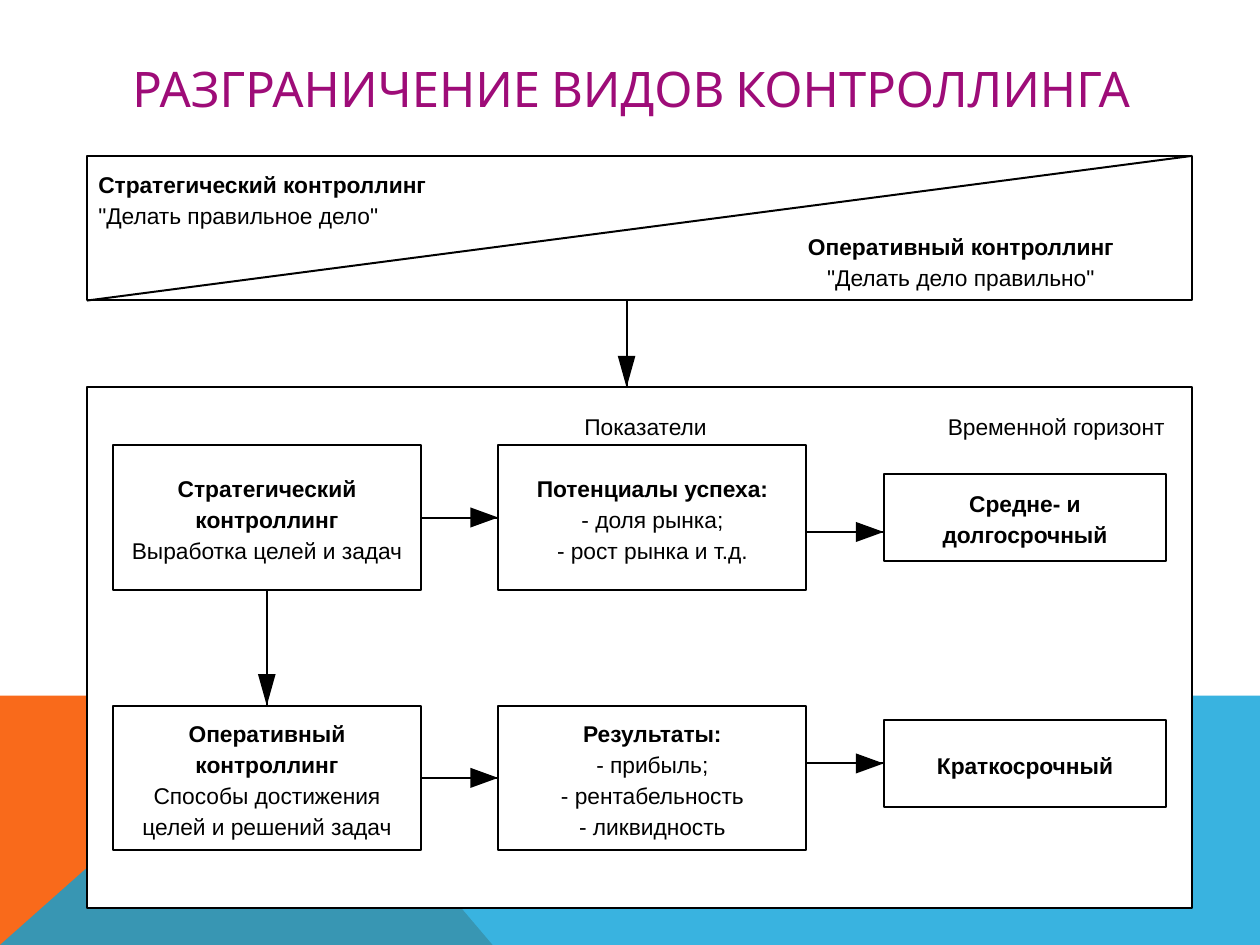
from dataclasses import dataclass

from lxml.etree import SubElement
from pptx import Presentation
from pptx.dml.color import RGBColor
from pptx.enum.shapes import MSO_CONNECTOR as Connector, MSO_SHAPE as Shape
from pptx.enum.text import MSO_ANCHOR as Anchor, MSO_AUTO_SIZE as AutoSize, PP_ALIGN as Align
from pptx.oxml.ns import qn
from pptx.util import Inches, Pt


@dataclass(frozen=True)
class Theme:
    title_color: RGBColor = RGBColor(0x9E, 0x0C, 0x78)
    ink: RGBColor = RGBColor(0, 0, 0)
    paper: RGBColor = RGBColor(255, 255, 255)
    orange: RGBColor = RGBColor(0xF9, 0x6A, 0x1B)
    blue: RGBColor = RGBColor(0x08, 0xA1, 0xD9)
    title_font: str = "Cabin"
    body_font: str = "Arial"
    title_size: Pt = Pt(28)
    body_size: Pt = Pt(13)
    leading: Pt = Pt(17.7)
    line: Pt = Pt(1.13)


@dataclass(frozen=True)
class Grid:
    """A box divided into equal columns and rows."""
    left: int
    top: int
    width: int
    height: int
    columns: float = 1
    rows: float = 1

    def point(self, column, row):
        return (round(self.left + self.width * column / self.columns),
                round(self.top + self.height * row / self.rows))

    def area(self, column, row, columns, rows):
        left, top = self.point(column, row)
        right, bottom = self.point(column + columns, row + rows)
        return left, top, right - left, bottom - top


THEME = Theme()
TOP, LEFT, BOTTOM, RIGHT = range(4)
BIG, SMALL = (12, 5), (11, 3)  # box sizes in columns and rows
STRATEGY_ROW, OPERATIONS_ROW = 10, 19
GOAL_COLUMN, MEASURE_COLUMN, HORIZON_COLUMN = 1, 16, 31


def set_text(shape, lines, bold_lines=0, align=Align.CENTER):
    frame = shape.text_frame
    frame.word_wrap = True
    frame.vertical_anchor = Anchor.MIDDLE
    frame.margin_left = frame.margin_right = frame.margin_top = frame.margin_bottom = 0
    frame.text = "\n".join(lines)
    for index, para in enumerate(frame.paragraphs):
        para.alignment = align
        para.line_spacing = THEME.leading
        for span in para.runs:
            span.font.name = THEME.body_font
            span.font.size = THEME.body_size
            span.font.bold = index < bold_lines
            span.font.color.rgb = THEME.ink


def add_box(page, area, lines=(), bold_lines=0):
    box = page.shapes.add_shape(Shape.RECTANGLE, *area)
    box.shadow.inherit = False
    box.fill.solid()
    box.fill.fore_color.rgb = THEME.paper
    box.line.color.rgb = THEME.ink
    box.line.width = THEME.line
    if lines:
        set_text(box, lines, bold_lines)
    return box


def add_label(page, area, lines, bold_lines=0, align=Align.LEFT):
    set_text(page.shapes.add_textbox(*area), lines, bold_lines, align)


def add_polygon(page, points, color):
    builder = page.shapes.build_freeform(*points[0], scale=1.0)
    builder.add_line_segments(points[1:], close=True)
    polygon = builder.convert_to_shape()
    polygon.shadow.inherit = False
    polygon.fill.solid()
    polygon.fill.fore_color.rgb = color
    polygon.line.fill.background()
    return polygon


def add_line(page, start, end):
    line = page.shapes.add_connector(Connector.STRAIGHT, *start, *end)
    line.line.color.rgb = THEME.ink
    line.line.width = THEME.line
    SubElement(line._element.spPr, qn("a:effectLst"))
    return line


def add_arrow(page, start, end, joined=None):
    """Line with a long solid head; joined is (source, site, target, site)."""
    line = add_line(page, start, end)
    if joined:
        source, source_site, target, target_site = joined
        line.begin_connect(source, source_site)
        line.end_connect(target, target_site)
    x, y = line.end_x, line.end_y
    if abs(x - line.begin_x) > abs(y - line.begin_y):
        length, half = Inches(0.22), Inches(0.08)
        base = [(x - length, y - half), (x - length, y + half)]
    else:
        length, half = Inches(0.25), Inches(0.07)
        base = [(x - half, y - length), (x + half, y - length)]
    add_polygon(page, [(x, y), *base], THEME.ink)


def draw_backdrop(page, whole):
    edge, bend, foot = 0.736, 0.223, 0.391
    add_polygon(page, [whole.point(*p) for p in
                       ((0, 1), (0, edge), (bend, edge), (foot, 1))], THEME.orange)
    wave = add_polygon(page, [whole.point(*p) for p in
                              ((0, 1), (bend, edge), (1, edge), (1, 1))], THEME.blue)
    color = wave._element.spPr.find(qn("a:solidFill"))[0]
    SubElement(color, qn("a:alpha"), val="80000")


def draw_title(page, area, text):
    title = page.shapes.title
    title.left, title.top, title.width, title.height = area
    frame = title.text_frame
    frame.text = text
    frame.word_wrap = True
    frame.auto_size = AutoSize.NONE
    frame.vertical_anchor = Anchor.MIDDLE
    para = frame.paragraphs[0]
    para.alignment = Align.CENTER
    font = para.runs[0].font
    font.name, font.size = THEME.title_font, THEME.title_size
    font.color.rgb = THEME.title_color


def draw_comparison(page, grid):
    add_box(page, grid.area(0, 0, 43, 5))
    add_line(page, grid.point(0, 5), grid.point(43, 0))
    add_label(page, grid.area(0.44, 0.2, 14, 2.5),
              ["Стратегический контроллинг", '"Делать правильное дело"'], 1)
    add_label(page, grid.area(28, 2.35, 12, 2.5),
              ["Оперативный контроллинг", '"Делать дело правильно"'], 1, Align.CENTER)


def draw_flow(page, grid):
    add_box(page, grid.area(0, 8, 43, 18))
    add_label(page, grid.area(19.36, 8.8, 8, 1), ["Показатели"])
    add_label(page, grid.area(33.5, 8.8, 9.4, 1), ["Временной горизонт"])

    flows = (
        (STRATEGY_ROW, 1, 3,
         ["Стратегический", "контроллинг", "Выработка целей и задач"],
         ["Потенциалы успеха:", "- доля рынка;", "- рост рынка и т.д."],
         ["Средне- и", "долгосрочный"]),
        (OPERATIONS_ROW, 0.5, 2,
         ["Оперативный", "контроллинг", "Способы достижения", "целей и решений задач"],
         ["Результаты:", "- прибыль;", "- рентабельность", "- ликвидность"],
         ["Краткосрочный"]),
    )
    goals = []
    for row, drop, arrow_drop, goal_lines, measure_lines, horizon_lines in flows:
        goal = add_box(page, grid.area(GOAL_COLUMN, row, *BIG), goal_lines, 2)
        measure = add_box(page, grid.area(MEASURE_COLUMN, row, *BIG), measure_lines, 1)
        add_box(page, grid.area(HORIZON_COLUMN, row + drop, *SMALL), horizon_lines, 2)
        add_arrow(page, grid.point(13, row + 2.5), grid.point(16, row + 2.5),
                  (goal, RIGHT, measure, LEFT))
        add_arrow(page, grid.point(28, row + arrow_drop), grid.point(31, row + arrow_drop))
        goals.append(goal)
    strategy, operations = goals
    add_arrow(page, grid.point(7, 15), grid.point(7, 19),
              (strategy, BOTTOM, operations, TOP))


def main():
    deck = Presentation()
    deck.slide_width, deck.slide_height = Inches(10), Inches(7.5)
    page = deck.slides.add_slide(deck.slide_layouts[5])
    whole = Grid(0, 0, deck.slide_width, deck.slide_height)
    diagram = Grid(*whole.area(0.069, 0.165, 0.877, 0.796), columns=43, rows=26)

    draw_backdrop(page, whole)
    draw_title(page, whole.area(0.09, 0.053, 0.822, 0.08), "РАЗГРАНИЧЕНИЕ ВИДОВ КОНТРОЛЛИНГА")
    draw_comparison(page, diagram)
    draw_flow(page, diagram)
    add_arrow(page, diagram.point(21, 5), diagram.point(21, 8))
    deck.save("out.pptx")


if __name__ == "__main__":
    main()
